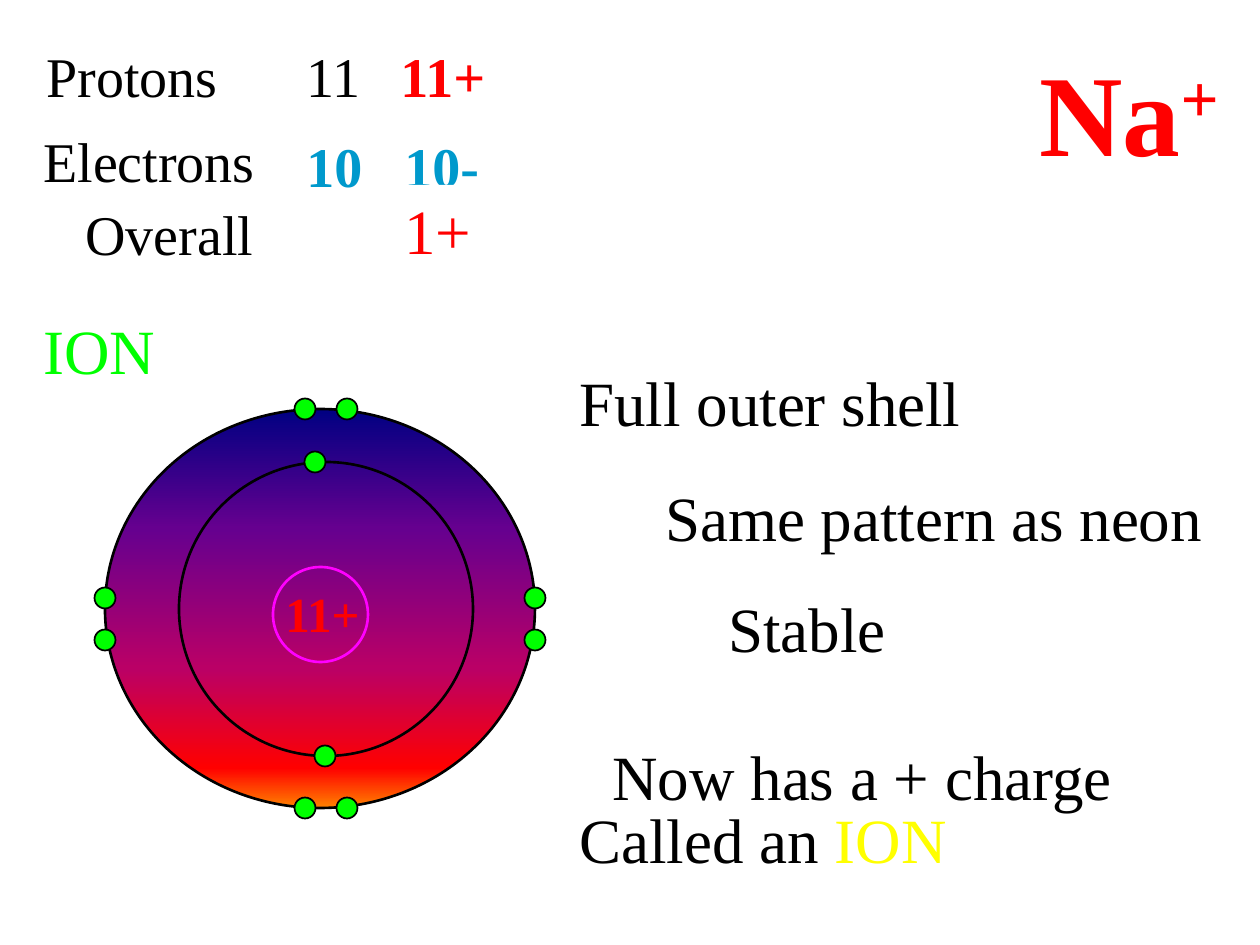
from itertools import product

from lxml import etree
from pptx import Presentation
from pptx.dml.color import RGBColor
from pptx.enum.shapes import MSO_SHAPE
from pptx.enum.text import MSO_AUTO_SIZE
from pptx.oxml.ns import qn
from pptx.util import Emu, Pt

OVAL = MSO_SHAPE.OVAL
FIT_SHAPE = MSO_AUTO_SIZE.SHAPE_TO_FIT_TEXT
FONT = "Times New Roman"

BLACK = RGBColor(0x00, 0x00, 0x00)
WHITE = RGBColor(0xFF, 0xFF, 0xFF)
RED = RGBColor(0xFF, 0x00, 0x00)
GREEN = RGBColor(0x00, 0xFF, 0x00)
BLUE = RGBColor(0x00, 0x99, 0xCC)
YELLOW = RGBColor(0xFF, 0xFF, 0x00)
MAGENTA = RGBColor(0xFF, 0x00, 0xFF)
SUNSET = [
    (0, RGBColor(0x00, 0x00, 0x82)),
    (30, RGBColor(0x66, 0x00, 0x8F)),
    (65, RGBColor(0xBA, 0x00, 0x66)),
    (90, RED),
    (100, RGBColor(0xFF, 0x82, 0x00)),
]

OUTER_SHELL = (105, 409, 430, 399)
INNER_SHELL = (179, 462, 294, 294)
NUCLEUS = (273, 567, 95, 95)
ELECTRON = 21


def px(n):
    return Emu(round(n * 914400 / 126))


def add_oval(s, box, line=BLACK, width=1.5, fill=None):
    sp = s.shapes.add_shape(OVAL, *map(px, box))
    sp.shadow.inherit = False
    sp.line.color.rgb = line
    sp.line.width = Pt(width)
    if fill is None:
        sp.fill.background()
    else:
        sp.fill.solid()
        sp.fill.fore_color.rgb = fill
    return sp


def fill_gradient(sp, stops):
    """Fill from top to bottom with (percent, colour) stops."""
    sp.fill.gradient()
    sp.fill.gradient_angle = 270
    stop_list = sp._element.spPr.find(qn("a:gradFill")).find(qn("a:gsLst"))
    for old in list(stop_list):
        stop_list.remove(old)
    for percent, color in stops:
        gs = etree.SubElement(stop_list, qn("a:gs"), pos=str(percent * 1000))
        etree.SubElement(gs, qn("a:srgbClr"), val=str(color))


def add_electron(s, cx, cy):
    left, top = cx - ELECTRON / 2, cy - ELECTRON / 2
    add_oval(s, (left, top, ELECTRON, ELECTRON), width=1, fill=GREEN)


def add_run(p, text, size, color, bold=False):
    r = p.add_run()
    r.text = text
    r.font.name = FONT
    r.font.size = Pt(size)
    r.font.bold = bold
    r.font.color.rgb = color
    return r


def add_text(s, box, text, size=36, color=BLACK, bold=False, fill=None, wrap=True):
    """Add a text box with one run and return its paragraph."""
    sp = s.shapes.add_textbox(*map(px, box))
    if fill is not None:
        sp.fill.solid()
        sp.fill.fore_color.rgb = fill
    tf = sp.text_frame
    tf.word_wrap = wrap
    tf.auto_size = FIT_SHAPE
    p = tf.paragraphs[0]
    add_run(p, text, size, color, bold)
    return p


def draw_atom(s):
    fill_gradient(add_oval(s, OUTER_SHELL), SUNSET)
    add_oval(s, NUCLEUS, line=MAGENTA)
    add_oval(s, INNER_SHELL)

    left, top, width, height = OUTER_SHELL
    pairs = [
        *product((305, 347), (top, top + height)),
        *product((left, left + width), (598, 640)),
    ]
    for cx, cy in [(325, 756), (315, 462), *pairs]:
        add_electron(s, cx, cy)
    add_text(s, (273, 577, 105, 72), "11+", 28, RED, True)


def write_charges(s):
    add_text(s, (34, 35, 231, 79), "Protons", 32)
    add_text(s, (294, 35, 105, 79), "11", 32)
    add_text(s, (388, 35, 136, 79), "11+", 32, RED, True)
    add_text(s, (31, 120, 252, 79), "Electrons", 32)
    add_text(s, (73, 193, 252, 79), "Overall", 32)
    add_text(s, (294, 125, 105, 79), "10", 32, BLUE, True, WHITE)
    add_text(s, (392, 125, 105, 79), "10-", 32, BLUE, True, WHITE)
    add_text(s, (392, 185, 105, 88), "1+", color=RED, fill=WHITE)
    add_text(s, (31, 305, 179, 88), "ION", color=GREEN)


def write_facts(s):
    facts = [
        (567, 357, 407, "Full outer shell"),
        (653, 472, 563, "Same pattern as neon"),
        (716, 583, 183, "Stable"),
        (600, 731, 527, "Now has a + charge"),
        (567, 794, 393, "Called an "),
    ]
    for left, top, width, text in facts:
        p = add_text(s, (left, top, width, 88), text, wrap=False)
    add_run(p, "ION", 36, YELLOW)


def write_symbol(s):
    p = add_text(s, (1027, 35, 233, 151), "Na", 66, RED, True)
    charge = add_run(p, "+", 66, RED, True)
    charge.font._element.set("baseline", "30000")


def main():
    prs = Presentation()
    prs.slide_width, prs.slide_height = px(1260), px(945)
    s = prs.slides.add_slide(prs.slide_layouts[6])
    draw_atom(s)
    write_charges(s)
    write_facts(s)
    write_symbol(s)
    prs.save("out.pptx")


if __name__ == "__main__":
    main()
